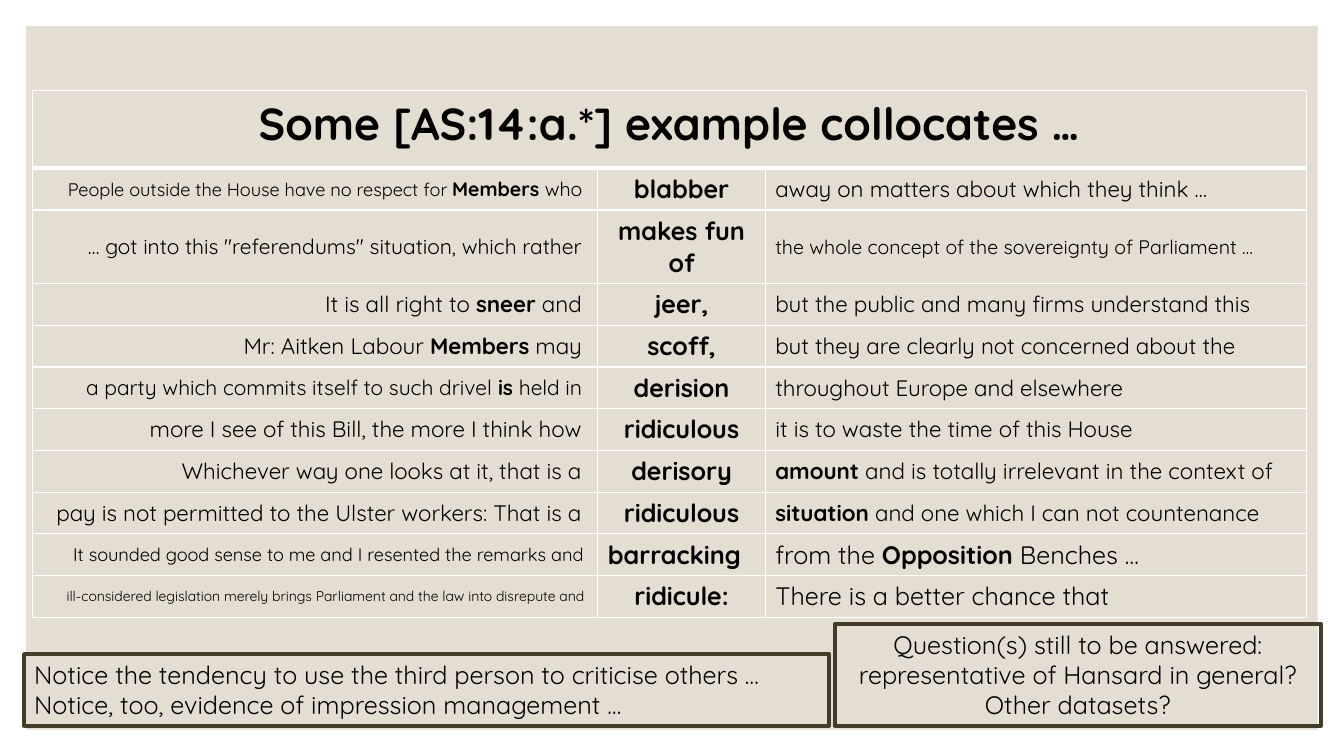
from itertools import repeat
from lxml import etree
from pptx import Presentation, util as u
from pptx.dml.color import RGBColor
from pptx.enum import shapes, text
from pptx.oxml.ns import qn

# Content: |bars| enclose bold words; sizes are points, one per run where they differ
HEADING = "Some [AS:14:a.*] example collocates …"
CONCORDANCE = [
    ("People outside the House have no respect for |Members| who ", (13, 14, 14),
     "blabber", "away on matters about which they think …", 16),
    ('… got into this "referendums" situation, which rather ', 15,
     "makes fun of", "the whole concept of the sovereignty of Parliament …", 14),
    ("It is all right to |sneer| and ", 16,
     "jeer,", "but the public and many firms understand this", 16),
    ("Mr: Aitken Labour |Members| may ", 16,
     "scoff,", "but they are clearly not concerned about the", 16),
    ("a party which commits itself to such drivel |is| held in ", 15,
     "derision", "throughout Europe and elsewhere", 16),
    ("more I see of this Bill, the more I think how ", 16,
     "ridiculous", "it is to waste the time of this House", 16),
    ("Whichever way one looks at it, that is a ", 16,
     "derisory", "|amount| and is totally irrelevant in the context of", 16),
    ("pay is not permitted to the Ulster workers: That is a ", 16,
     "ridiculous", "|situation| and one which I can not countenance", 16),
    ("It sounded good sense to me and I resented the remarks and ", 13,
     "barracking", "from the |Opposition |Benches …", 18),
    ("ill-considered legislation merely brings Parliament and the law into disrepute and ", 10,
     "ridicule:", "There is a better chance that", 18),
]
LEFT, CENTER, RIGHT = text.PP_ALIGN.LEFT, text.PP_ALIGN.CENTER, text.PP_ALIGN.RIGHT
NOTES = [
    ((0.24, 6.49, 7.98, 0.71), LEFT,
     ["Notice the tendency to use the third person to criticise others …",
      "Notice, too, evidence of impression management …"]),
    ((8.28, 6.19, 4.82, 1.01), CENTER,
     ["Question(s) still to be answered:\vrepresentative of Hansard in general?",
      "Other datasets?"]),
]

# Format
COLORS = {"panel": "E3DED1", "rule": "FFFFFF", "frame": "443C29", "text": "000000"}
FONT = "Quicksand"
WIDTH, HEIGHT, MARGIN = 13.33, 7.5, 0.26
TABLE_LEFT, TABLE_TOP = 0.32, 0.9
COLUMNS = (5.61, 1.66, 5.37)
HEADING_ROW, LINE_ROW, TWO_LINE_ROW = 0.77, 0.41, 0.73
THIN, THICK = 1, 3


def color(name):
    return RGBColor.from_string(COLORS[name])


def style(font, size, bold=False):
    for key, value in {"name": FONT, "size": u.Pt(size), "bold": bold}.items():
        setattr(font, key, value)
    font.color.rgb = color("text")


def write(cell, marked, sizes, align, all_bold=False):
    paragraph = cell.text_frame.paragraphs[0]
    paragraph.alignment = align
    parts = [(words, all_bold or i % 2 == 1)
             for i, words in enumerate(marked.split("|")) if words]
    if isinstance(sizes, int):
        sizes = repeat(sizes)
    for (words, bold), size in zip(parts, sizes):
        run = paragraph.add_run()
        run.text = words
        style(run.font, size, bold)


def add_borders(cell, top, bottom):
    properties = cell._tc.get_or_add_tcPr()
    widths = {"lnL": THIN, "lnR": THIN, "lnT": top, "lnB": bottom}
    for position, (side, width) in enumerate(widths.items()):
        line = etree.Element(qn("a:" + side), w=str(u.Pt(width)))
        fill = etree.SubElement(line, qn("a:solidFill"))
        etree.SubElement(fill, qn("a:srgbClr"), val=COLORS["rule"])
        properties.insert(position, line)


def add_panel(slide):
    panel = slide.shapes.add_shape(
        shapes.MSO_SHAPE.RECTANGLE, u.Inches(MARGIN), u.Inches(MARGIN),
        u.Inches(WIDTH - 2 * MARGIN), u.Inches(HEIGHT - 2 * MARGIN))
    panel.shadow.inherit = False
    panel.fill.solid()
    panel.fill.fore_color.rgb = color("panel")
    panel.line.fill.background()


def add_concordance(slide):
    heights = [HEADING_ROW] + [
        TWO_LINE_ROW if " " in row[2] else LINE_ROW for row in CONCORDANCE]
    table = slide.shapes.add_table(
        len(heights), len(COLUMNS), u.Inches(TABLE_LEFT), u.Inches(TABLE_TOP),
        u.Inches(sum(COLUMNS)), u.Inches(sum(heights))).table
    table.horz_banding = False
    for column, width in zip(table.columns, COLUMNS):
        column.width = u.Inches(width)
    for r, (row, height) in enumerate(zip(table.rows, heights)):
        row.height = u.Inches(height)
        for cell in row.cells:
            cell.fill.solid()
            cell.fill.fore_color.rgb = color("panel")
            cell.vertical_anchor = text.MSO_ANCHOR.MIDDLE if r else text.MSO_ANCHOR.TOP
            add_borders(cell, THICK if r == 1 else THIN, THICK if r == 0 else THIN)

    table.cell(0, 0).merge(table.cell(0, len(COLUMNS) - 1))
    write(table.cell(0, 0), HEADING, 32, CENTER, True)
    for r, (before, before_size, node, after, after_size) in enumerate(CONCORDANCE, 1):
        write(table.cell(r, 0), before, before_size, RIGHT)
        write(table.cell(r, 1), node, 18, LEFT if node == "barracking" else CENTER, True)
        write(table.cell(r, 2), after, after_size, LEFT)


def add_note(slide, place, align, lines):
    note = slide.shapes.add_textbox(*map(u.Inches, place))
    note.line.color.rgb = color("frame")
    note.line.width = u.Pt(3)
    frame = note.text_frame
    frame.word_wrap = False
    for i, words in enumerate(lines):
        paragraph = frame.add_paragraph() if i else frame.paragraphs[0]
        paragraph.text = words
        paragraph.alignment = align
        for run in paragraph.runs:
            style(run.font, 18)


def main():
    deck = Presentation()
    deck.slide_width, deck.slide_height = u.Inches(WIDTH), u.Inches(HEIGHT)
    slide = deck.slides.add_slide(deck.slide_layouts[6])
    add_panel(slide)
    add_concordance(slide)
    for place, align, lines in NOTES:
        add_note(slide, place, align, lines)
    deck.save("out.pptx")


if __name__ == "__main__":
    main()
